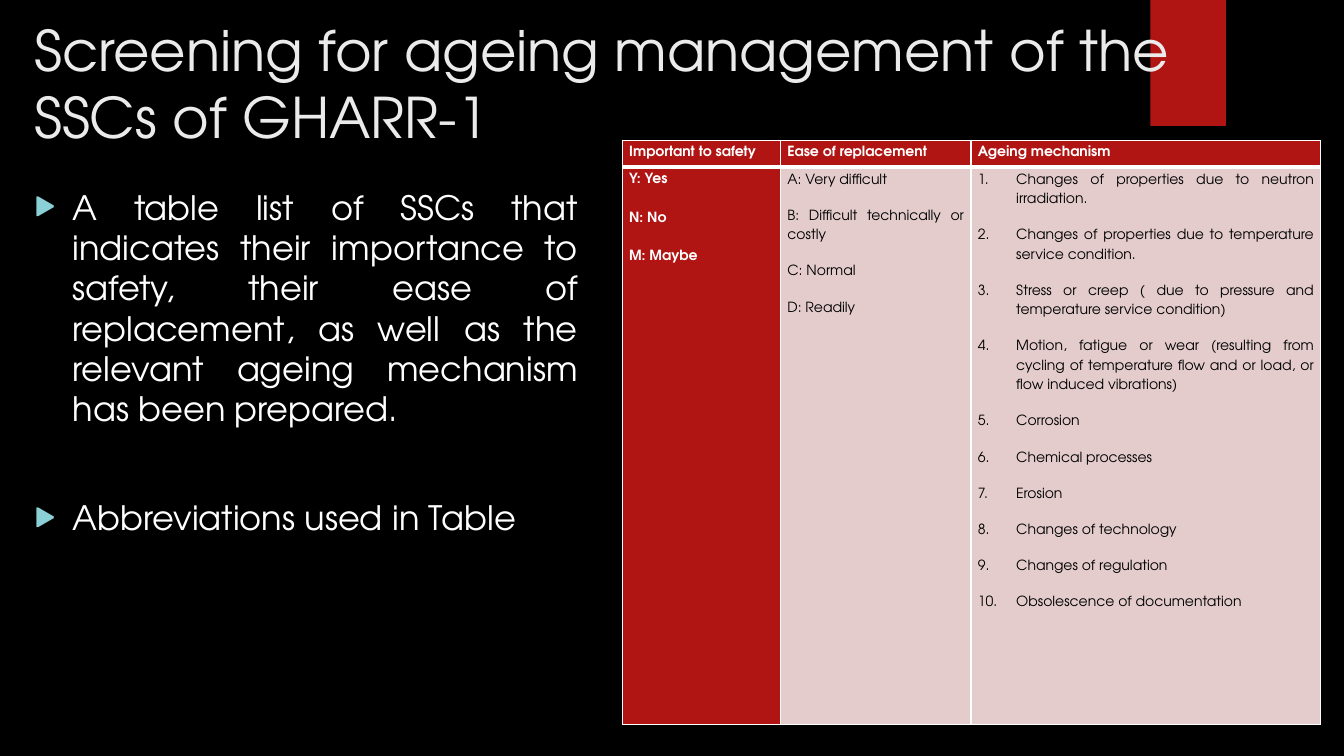
from dataclasses import dataclass

from lxml import etree
from pptx import Presentation
from pptx import util as u
from pptx.dml.color import RGBColor
from pptx.enum import shapes, text
from pptx.oxml.ns import qn


@dataclass(frozen=True)
class Theme:
    font: str = "TeX Gyre Adventor"
    background: str = "000000"
    heading: str = "EBEBEB"
    light: str = "FFFFFF"
    dark: str = "000000"
    accent: str = "B01513"
    pale: str = "E4CCCC"
    bullet: str = "8AD0D6"
    title_size: int = 40
    body_size: int = 24
    table_size: int = 10


TITLE = "Screening for ageing management of the SSCs of GHARR-1"
POINTS = [
    "A table list of SSCs that indicates their importance to safety, their ease of "
    "replacement, as well as the relevant ageing mechanism has been prepared.",
    "Abbreviations used in Table",
]
HEADINGS = ["Important to safety", "Ease of replacement", "Ageing mechanism"]
SAFETY = ["Y: Yes", "N: No", "M: Maybe"]
REPLACEMENT = [
    "A: Very difficult",
    "B: Difficult technically or costly",
    "C: Normal",
    "D: Readily",
]
MECHANISMS = [
    "Changes of properties due to neutron irradiation.",
    "Changes of properties due to temperature service condition.",
    "Stress or creep ( due to pressure and temperature service condition)",
    "Motion, fatigue or wear (resulting from cycling of temperature flow and or load, "
    "or flow induced vibrations)",
    "Corrosion",
    "Chemical processes",
    "Erosion",
    "Changes of technology",
    "Changes of regulation",
    "Obsolescence of documentation",
]


def add_xml(parent, tag, **attributes):
    return etree.SubElement(parent, qn(tag), attributes)


class SlideBuilder:
    def __init__(self, slide, theme):
        self.slide = slide
        self.theme = theme
        fill = slide.background.fill
        fill.solid()
        fill.fore_color.rgb = RGBColor.from_string(theme.background)

    def style(self, paragraph, size, color, bold=False):
        font = paragraph.font
        font.name = self.theme.font
        font.size = u.Pt(size)
        font.bold = bold
        font.color.rgb = RGBColor.from_string(color)

    def hang(self, paragraph):
        """Give the paragraph a hanging indent and return its properties."""
        properties = paragraph._p.get_or_add_pPr()
        properties.set("marL", str(u.Inches(0.38)))
        properties.set("indent", str(u.Inches(-0.38)))
        return properties

    def place(self, placeholder, left, top, width, height):
        placeholder.left, placeholder.top = u.Inches(left), u.Inches(top)
        placeholder.width, placeholder.height = u.Inches(width), u.Inches(height)
        frame = placeholder.text_frame
        frame.word_wrap = True
        frame.auto_size = text.MSO_AUTO_SIZE.NONE
        frame.vertical_anchor = text.MSO_ANCHOR.TOP
        return frame

    def tab(self, left, top, width, height):
        """Draw the accent tab behind everything else."""
        tab = self.slide.shapes.add_shape(
            shapes.MSO_SHAPE.RECTANGLE, *map(u.Inches, (left, top, width, height)))
        tab.shadow.inherit = False
        tab.fill.solid()
        tab.fill.fore_color.rgb = RGBColor.from_string(self.theme.accent)
        tab.line.fill.background()
        self.slide.shapes._spTree.insert(2, tab._element)

    def title(self, wording, *box):
        frame = self.place(self.slide.shapes.title, *box)
        frame.text = wording
        heading = frame.paragraphs[0]
        heading.alignment = text.PP_ALIGN.LEFT
        self.style(heading, self.theme.title_size, self.theme.heading)

    def bullets(self, points, gap, *box):
        frame = self.place(self.slide.placeholders[1], *box)
        frame.text = "\n".join(points)
        for index, point in enumerate(frame.paragraphs):
            point.alignment = text.PP_ALIGN.JUSTIFY
            point.space_before = u.Pt(gap if index else 0)
            properties = self.hang(point)
            color = add_xml(properties, "a:buClr")
            add_xml(color, "a:srgbClr", val=self.theme.bullet)
            add_xml(properties, "a:buSzPct", val="80000")
            add_xml(properties, "a:buFont", typeface=self.theme.font)
            add_xml(properties, "a:buChar", char="▶")
            self.style(point, self.theme.body_size, self.theme.light)

    def table(self, left, top, widths, heights):
        frame = self.slide.shapes.add_table(
            len(heights), len(widths), u.Inches(left), u.Inches(top),
            u.Inches(sum(widths)), u.Inches(sum(heights)))
        table = frame.table
        table.horz_banding = False
        for column, width in zip(table.columns, widths):
            column.width = u.Inches(width)
        for row, height in zip(table.rows, heights):
            row.height = u.Inches(height)
        return table

    def cell(self, cell, lines, fill, color, bold=False, gap=12, numbered=False,
             top_line=1, bottom_line=1):
        cell.margin_left = cell.margin_right = u.Inches(0.07)
        cell.margin_top = cell.margin_bottom = 0
        cell.text = "\n".join(lines)
        paragraphs = cell.text_frame.paragraphs
        for line in paragraphs:
            line.alignment = text.PP_ALIGN.JUSTIFY
            line.line_spacing = 1.5
            line.space_after = u.Pt(0 if line is paragraphs[-1] else gap)
            if numbered:
                add_xml(self.hang(line), "a:buAutoNum", type="arabicPeriod")
            self.style(line, self.theme.table_size, color, bold)
        properties = cell._tc.get_or_add_tcPr()
        borders = {"a:lnL": 1, "a:lnR": 1, "a:lnT": top_line, "a:lnB": bottom_line}
        for side, width in borders.items():
            border = add_xml(properties, side, w=str(u.Pt(width)))
            add_xml(add_xml(border, "a:solidFill"), "a:srgbClr", val=self.theme.light)
        cell.fill.solid()
        cell.fill.fore_color.rgb = RGBColor.from_string(fill)


def main():
    deck = Presentation()
    deck.slide_width, deck.slide_height = u.Inches(13.33), u.Inches(7.5)
    theme = Theme()
    page = SlideBuilder(deck.slides.add_slide(deck.slide_layouts[1]), theme)

    page.tab(11.41, 0, 0.75, 1.25)
    page.title(TITLE, 0.24, 0.1, 12.7, 1.15)
    page.bullets(POINTS, 48.8, 0.24, 1.8, 5.59, 5.04)

    screening = page.table(6.17, 1.39, widths=[1.57, 1.89, 3.47], heights=[0.27, 5.53])
    for column, heading in enumerate(HEADINGS):
        page.cell(screening.cell(0, column), [heading], theme.accent, theme.light,
                  bold=True, bottom_line=3)
    page.cell(screening.cell(1, 0), SAFETY, theme.accent, theme.light,
              bold=True, gap=13.8, top_line=3)
    page.cell(screening.cell(1, 1), REPLACEMENT, theme.pale, theme.dark, top_line=3)
    page.cell(screening.cell(1, 2), MECHANISMS, theme.pale, theme.dark,
              numbered=True, top_line=3)

    deck.save("out.pptx")


if __name__ == "__main__":
    main()
